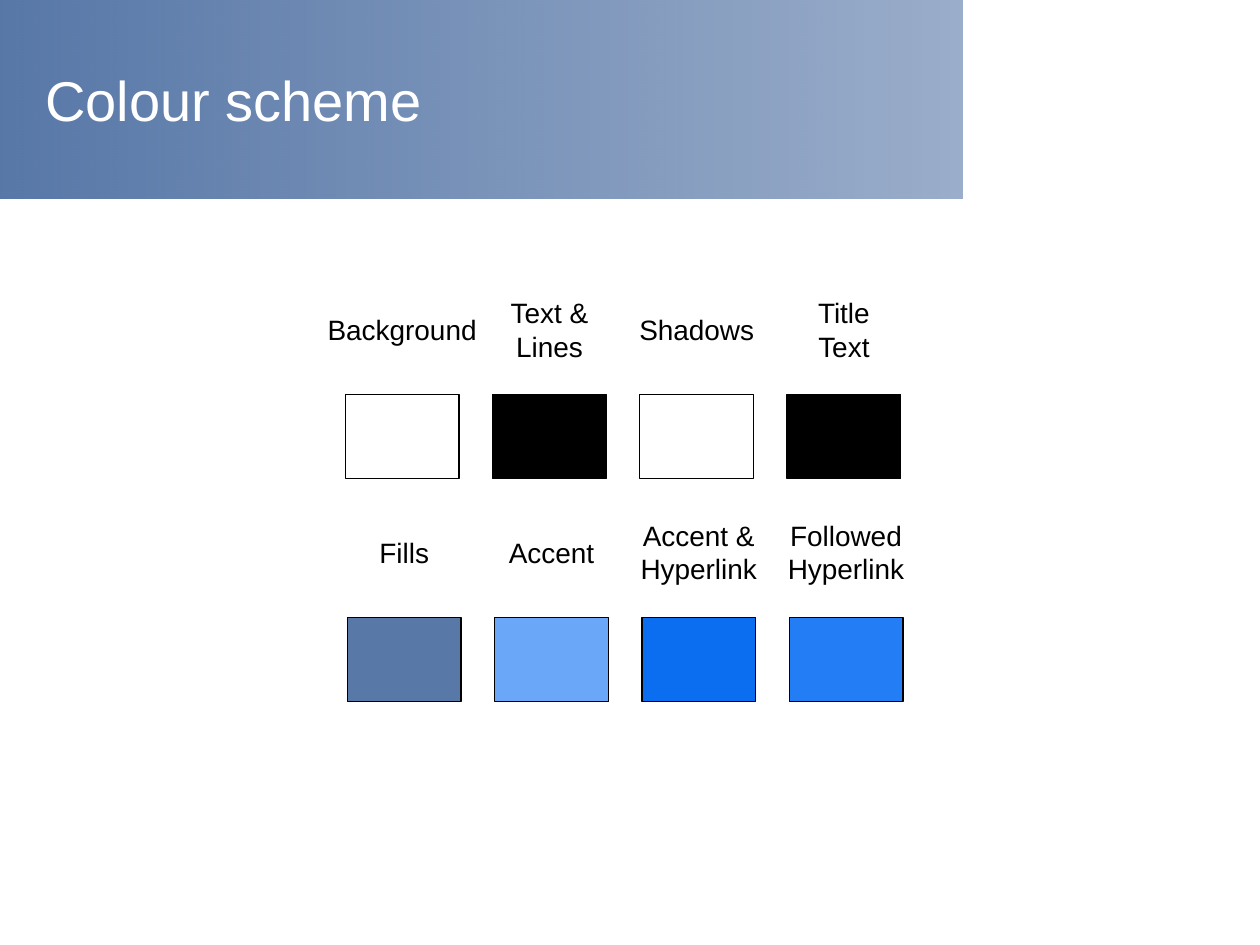
from lxml.etree import SubElement as Sub
from pptx import Presentation
from pptx.dml.color import RGBColor as RGB
from pptx.enum.shapes import MSO_SHAPE as Shape
from pptx.enum.text import MSO_ANCHOR as Anchor, MSO_AUTO_SIZE as Fit, PP_ALIGN as Align
from pptx.oxml.ns import qn
from pptx.util import Pt

WHITE = RGB(0xFF, 0xFF, 0xFF)
BLACK = RGB(0x00, 0x00, 0x00)
STEEL = RGB(0x58, 0x78, 0xA8)
SKY = RGB(0x6B, 0xA7, 0xF8)
BLUE = RGB(0x0B, 0x6D, 0xEF)
AZURE = RGB(0x23, 0x7D, 0xF5)

# Swatch size, column step and distance from swatch top up to label centre
WIDE, HIGH, STEP, RISE = 65, 48.2, 84.15, 37.1

# Row: left, top, then (label, label width, colour); \v breaks a line
ROWS = [
    (197.3, 225.4, [("Background", 101, WHITE), ("Text &\nLines", 62, BLACK),
                    ("Shadows", 82, WHITE), ("Title\vText", 47, BLACK)]),
    (198.5, 352.8, [("Fills", 46, STEEL), ("Accent", 66, SKY),
                    ("Accent &\nHyperlink", 84, BLUE),
                    ("Followed\nHyperlink", 84, AZURE)]),
]


class Deck:
    font = "Arial"

    def __init__(self):
        self.prs = Presentation()
        self.prs.slide_width, self.prs.slide_height = Pt(720), Pt(540)
        self.slide = self.prs.slides.add_slide(self.prs.slide_layouts[6])

    def rect(self, x, y, w, h):
        box = self.slide.shapes.add_shape(Shape.RECTANGLE, Pt(x), Pt(y), Pt(w), Pt(h))
        box.shadow.inherit = False
        return box

    def band(self, x, y, w, h, color):
        """Bar that fades to 60 % opacity on the right."""
        bar = self.rect(x, y, w, h)
        bar.line.fill.background()
        bar.fill.gradient()
        bar.fill.gradient_angle = 0
        for stop in bar.fill.gradient_stops:
            stop.color.rgb = color
        tints = list(bar._element.iter(qn("a:srgbClr")))
        Sub(tints[-1], qn("a:alpha"), val="60000")

    def swatch(self, x, y, color):
        box = self.rect(x, y, WIDE, HIGH)
        box.fill.solid()
        box.fill.fore_color.rgb = color
        box.line.color.rgb = BLACK
        box.line.width = Pt(0.75)

    def text(self, x, y, w, h, words, size, color, align, wrap=True):
        box = self.slide.shapes.add_textbox(Pt(x), Pt(y), Pt(w), Pt(h))
        frame = box.text_frame
        frame.word_wrap = wrap
        frame.auto_size = Fit.NONE if wrap else Fit.SHAPE_TO_FIT_TEXT
        frame.vertical_anchor = Anchor.MIDDLE if wrap else Anchor.TOP
        frame.text = words
        for para in frame.paragraphs:
            para.alignment = align
            para.font.name = self.font
            para.font.size = Pt(size)
            para.font.color.rgb = color

    def label(self, mid, y, w, words):
        """Caption centred on the point (mid, y)."""
        h = 7.2 + 19.4 * len(words.splitlines())
        self.text(mid - w / 2, y - h / 2, w, h, words, 16, BLACK, Align.CENTER, False)


def main():
    deck = Deck()

    # Title band
    deck.band(0, 0, 550, 113.4, STEEL)
    deck.text(18.7, 11.5, 510.5, 90, "Colour scheme", 32, WHITE, Align.LEFT)

    # Labelled swatches
    for left, top, items in ROWS:
        for col, (words, width, color) in enumerate(items):
            x = left + col * STEP
            deck.swatch(x, top, color)
            deck.label(x + WIDE / 2, top - RISE, width, words)

    deck.prs.save("out.pptx")


if __name__ == "__main__":
    main()
